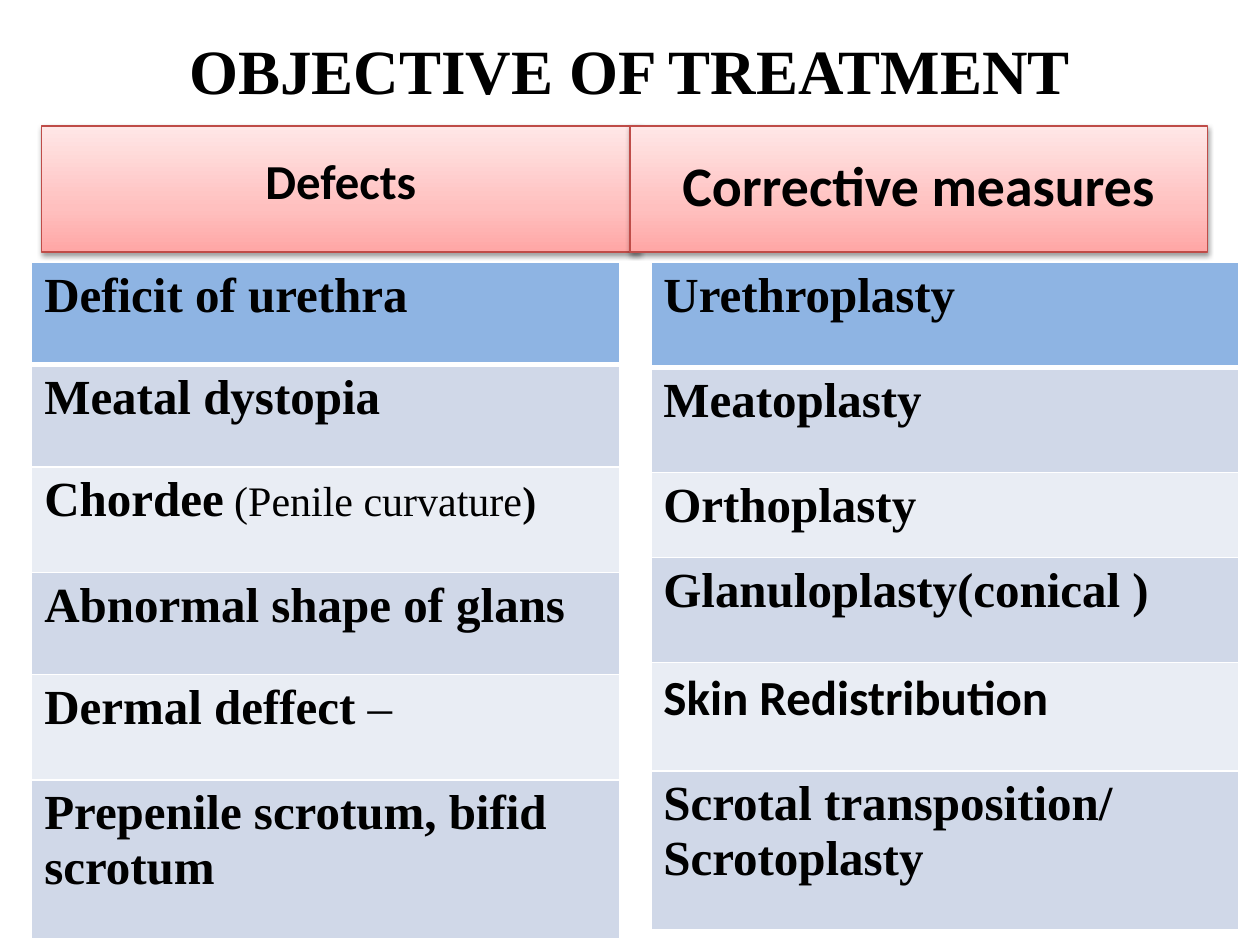
from copy import deepcopy
from dataclasses import dataclass

from lxml.etree import SubElement
from pptx import Presentation
from pptx.dml.color import RGBColor
from pptx.enum.shapes import MSO_SHAPE
from pptx.enum.text import MSO_ANCHOR, PP_ALIGN
from pptx.oxml import parse_xml
from pptx.oxml.ns import nsdecls, qn
from pptx.util import Cm, Pt

SERIF = "Times New Roman"
SANS = "Calibri"
HEADING_FILL = "8EB4E3"
BAND_FILLS = ("D0D8E8", "E9EDF4")
BANNER_STOPS = ((0, "FFA6A5"), (0.35, "FFC0BF"), (1, "FFE7E7"))
TABLE_TOP = 5.29
TABLE_WIDTH = 11.85


@dataclass(frozen=True)
class Banner:
    label: str
    left: float
    width: float
    size: float
    bottom_inset: float


@dataclass(frozen=True)
class Phrase:
    text: str
    size: float = 28
    bold: bool = True


@dataclass(frozen=True)
class Entry:
    phrases: tuple[Phrase, ...]
    height: float
    font: str = SERIF


@dataclass(frozen=True)
class Column:
    banner: Banner
    left: float
    entries: tuple[Entry, ...]


COLUMNS = (
    Column(
        Banner("Defects", 0.84, 12.06, 27.9, 0.86),
        0.64,
        (
            Entry((Phrase("Deficit of urethra"),), 2.06),
            Entry((Phrase("Meatal dystopia"),), 2.06),
            Entry(
                (Phrase("Chordee"), Phrase(" (Penile curvature", 24, False), Phrase(")", 24)),
                2.13,
            ),
            Entry((Phrase("Abnormal shape of glans"),), 2.06),
            Entry((Phrase("Dermal deffect "), Phrase("–", bold=False)), 2.12),
            Entry((Phrase("Prepenile scrotum, bifid scrotum"),), 3.2),
        ),
    ),
    Column(
        Banner("Corrective measures", 12.7, 11.64, 31.9, 0.69),
        13.12,
        (
            Entry((Phrase("Urethroplasty"),), 2.12),
            Entry((Phrase("Meatoplasty"),), 2.12),
            Entry((Phrase("Orthoplasty"),), 1.71),
            Entry((Phrase("Glanuloplasty(conical )"),), 2.12),
            Entry((Phrase("Skin Redistribution"),), 2.18, SANS),
            Entry((Phrase("Scrotal transposition/ Scrotoplasty"),), 3.2),
        ),
    ),
)


def color(value: str) -> RGBColor:
    return RGBColor.from_string(value)


def format_font(font, name: str, size: float, bold: bool = True) -> None:
    font.name = name
    font.size = Pt(size)
    font.bold = bold
    font.color.rgb = color("000000")


def add_shadow(shape) -> None:
    shape.shadow.inherit = False
    effects = shape._element.spPr.find(qn("a:effectLst"))
    effects.append(parse_xml(
        f'<a:outerShdw {nsdecls("a")} blurRad="{Pt(3.1)}" dist="{Pt(1.6)}" '
        'dir="5400000" rotWithShape="0"><a:srgbClr val="000000">'
        '<a:alpha val="38000"/></a:srgbClr></a:outerShdw>'
    ))


def draw_banner(slide, banner: Banner) -> None:
    shape = slide.shapes.add_shape(
        MSO_SHAPE.RECTANGLE, Cm(banner.left), Cm(2.54), Cm(banner.width), Cm(2.54)
    )
    shape.fill.gradient()
    shape.fill.gradient_angle = 90
    stop_list = shape._element.spPr.find(".//" + qn("a:gsLst"))
    stop_list.append(deepcopy(stop_list[0]))
    for stop, (position, shade) in zip(shape.fill.gradient_stops, BANNER_STOPS):
        stop.position = position
        stop.color.rgb = color(shade)
    shape.line.color.rgb = color("BF4C48")
    shape.line.width = Pt(0.75)
    add_shadow(shape)
    frame = shape.text_frame
    frame.word_wrap = True
    frame.vertical_anchor = MSO_ANCHOR.BOTTOM
    frame.margin_top = Cm(0)
    frame.margin_bottom = Cm(banner.bottom_inset)
    paragraph = frame.paragraphs[0]
    paragraph.text = banner.label
    paragraph.alignment = PP_ALIGN.CENTER
    format_font(paragraph.font, SANS, banner.size)


def set_borders(cell, bottom_width: float) -> None:
    properties = cell._tc.get_or_add_tcPr()
    widths = {"lnL": 1, "lnR": 1, "lnT": 1, "lnB": bottom_width}
    for position, (side, width) in enumerate(widths.items()):
        border = SubElement(properties, qn(f"a:{side}"), w=str(Pt(width)))
        properties.insert(position, border)
        fill = SubElement(border, qn("a:solidFill"))
        SubElement(fill, qn("a:srgbClr"), val="FFFFFF")


def fill_cell(cell, entry: Entry, index: int) -> None:
    shade = BAND_FILLS[(index - 1) % 2] if index else HEADING_FILL
    cell.fill.solid()
    cell.fill.fore_color.rgb = color(shade)
    set_borders(cell, 1 if index else 3)
    paragraph = cell.text_frame.paragraphs[0]
    lead = entry.phrases[0]
    format_font(paragraph.font, entry.font, lead.size, lead.bold)
    for phrase in entry.phrases:
        run = paragraph.add_run()
        run.text = phrase.text
        if phrase.size != lead.size:
            run.font.size = Pt(phrase.size)
        if phrase.bold != lead.bold:
            run.font.bold = phrase.bold


def draw_table(slide, column: Column) -> None:
    height = sum(entry.height for entry in column.entries)
    table = slide.shapes.add_table(
        len(column.entries), 1, Cm(column.left), Cm(TABLE_TOP), Cm(TABLE_WIDTH), Cm(height)
    ).table
    for index, entry in enumerate(column.entries):
        table.rows[index].height = Cm(entry.height)
        fill_cell(table.cell(index, 0), entry, index)


def main() -> None:
    presentation = Presentation()
    presentation.slide_width = Cm(25.4)
    presentation.slide_height = Cm(19.05)
    slide = presentation.slides.add_slide(presentation.slide_layouts[5])

    title = slide.shapes.title
    title.left, title.top, title.width, title.height = Cm(1.27), Cm(-0.2), Cm(22.86), Cm(3.18)
    title.text_frame.vertical_anchor = MSO_ANCHOR.MIDDLE
    heading = title.text_frame.paragraphs[0]
    heading.text = "OBJECTIVE OF TREATMENT"
    heading.alignment = PP_ALIGN.CENTER
    format_font(heading.font, SERIF, 36)

    for column in COLUMNS:
        draw_banner(slide, column.banner)
        draw_table(slide, column)

    presentation.save("out.pptx")


if __name__ == "__main__":
    main()
